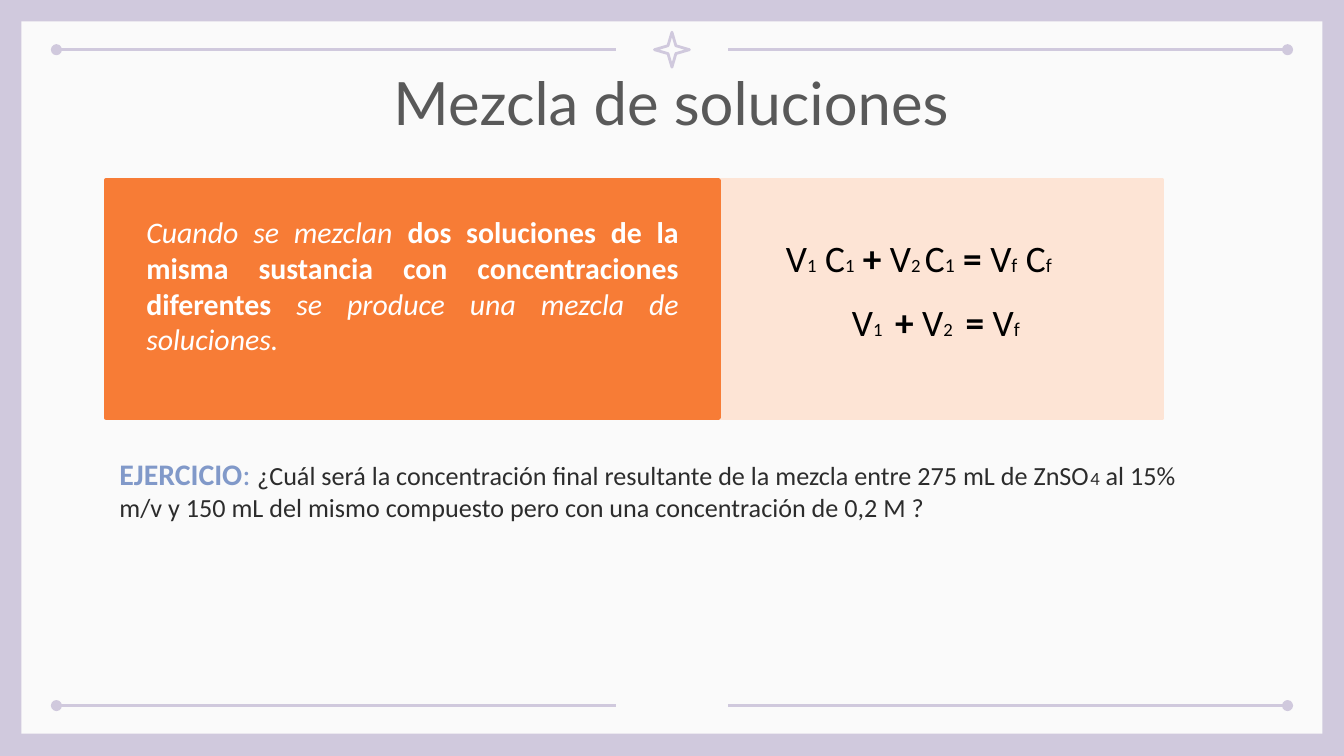
"""Build the slide on mixing solutions."""
from dataclasses import dataclass

from lxml import etree
from pptx import Presentation
from pptx.dml.color import RGBColor
from pptx.enum.shapes import MSO_CONNECTOR, MSO_SHAPE
from pptx.enum.text import MSO_ANCHOR, PP_ALIGN
from pptx.oxml.ns import qn
from pptx.util import Inches, Pt

LILAC = RGBColor(0xD0, 0xC9, 0xDD)
PAPER = RGBColor(0xFA, 0xFA, 0xFA)
GREY = RGBColor(0x59, 0x59, 0x59)
PEACH = RGBColor(0xFD, 0xE4, 0xD5)
ORANGE = RGBColor(0xF7, 0x7C, 0x36)
BLUE = RGBColor(0x81, 0x99, 0xC9)
INK = RGBColor(0x2C, 0x2C, 0x2C)
BLACK = RGBColor(0, 0, 0)
WHITE = RGBColor(0xFF, 0xFF, 0xFF)

RECTANGLE, STAR = MSO_SHAPE.RECTANGLE, MSO_SHAPE.STAR_4_POINT
STRAIGHT = MSO_CONNECTOR.STRAIGHT
TOP = MSO_ANCHOR.TOP
LEFT, CENTER, JUSTIFY = PP_ALIGN.LEFT, PP_ALIGN.CENTER, PP_ALIGN.JUSTIFY


@dataclass(frozen=True)
class Area:
    left: float
    top: float
    width: float
    height: float

    def lengths(self) -> tuple:
        return tuple(Inches(v) for v in (self.left, self.top, self.width, self.height))


@dataclass(frozen=True)
class Span:
    text: str
    size: float
    color: RGBColor = BLACK
    bold: bool = False
    italic: bool = False
    font: str = "Calibri"


@dataclass(frozen=True)
class TextBlock:
    area: Area
    spans: tuple
    align: PP_ALIGN = LEFT
    inset: float = 0.05
    indent: float = 0


@dataclass(frozen=True)
class Panel:
    area: Area
    fill: RGBColor | None
    line: RGBColor | None
    weight: float = 2
    kind: MSO_SHAPE = RECTANGLE


def add_panel(page, panel: Panel):
    """Draw a flat preset shape."""
    shape = page.shapes.add_shape(panel.kind, *panel.area.lengths())
    shape.shadow.inherit = False
    if panel.fill is None:
        shape.fill.background()
    else:
        shape.fill.solid()
        shape.fill.fore_color.rgb = panel.fill
    if panel.line is None:
        shape.line.fill.background()
    else:
        shape.line.color.rgb = panel.line
        shape.line.width = Pt(panel.weight)
    return shape


def add_rule(page, start: float, end: float, height: float, dotted_end: str) -> None:
    """Draw a rule with a dot at its outer end."""
    rule = page.shapes.add_connector(
        STRAIGHT, Inches(start), Inches(height), Inches(end), Inches(height))
    rule.line.color.rgb = LILAC
    rule.line.width = Pt(1.5)
    etree.SubElement(rule.line._get_or_add_ln(), qn(dotted_end), type="oval")
    etree.SubElement(rule._element.spPr, qn("a:effectLst"))


def write_text(box, block: TextBlock) -> None:
    """Place a text box and fill it with formatted spans."""
    box.left, box.top, box.width, box.height = block.area.lengths()
    frame = box.text_frame
    layout = {
        "word_wrap": True, "vertical_anchor": TOP,
        "margin_left": Inches(0.1), "margin_right": Inches(0.1),
        "margin_top": Inches(block.inset), "margin_bottom": Inches(block.inset),
    }
    for name, value in layout.items():
        setattr(frame, name, value)
    para = frame.paragraphs[0]
    para.alignment = block.align
    if block.indent:
        para._p.get_or_add_pPr().set("marL", str(Inches(block.indent)))
    for span in block.spans:
        run = para.add_run()
        run.text = span.text
        style = {"name": span.font, "size": Pt(span.size),
                 "bold": span.bold, "italic": span.italic}
        for name, value in style.items():
            setattr(run.font, name, value)
        run.font.color.rgb = span.color


def term(symbol: str, index: str, index_size: float = 10) -> tuple:
    """Return a symbol with its small index."""
    return Span(symbol, 20), Span(index, index_size)


def sign(text: str) -> Span:
    """Return a bold operator."""
    return Span(text, 20, bold=True)


TITLE = TextBlock(Area(0.79, 0.39, 8.41, 0.63),
                  (Span("Mezcla de soluciones", 32, GREY, font="Lato"),), CENTER, 0.1)
EQUATIONS_PANEL = Panel(Area(4.87, 1.34, 3.78, 1.77), PEACH, PEACH)
DEFINITION_PANEL = Panel(Area(0.79, 1.34, 4.56, 1.77), ORANGE, ORANGE)
EQUATIONS_AND_EXERCISE = (
    TextBlock(Area(5.75, 1.7, 4.4, 0.95), (
        *term("V", "1"), *term(" C", "1"), sign(" +"), *term(" V", "2 "),
        *term("C", "1", 10.5), sign(" = "), *term("V", "f", 10.5),
        *term(" C", "f", 10.5))),
    TextBlock(Area(6.24, 2.18, 4.4, 0.44), (
        *term("V", "1 "), sign(" +"), *term(" V", "2 "),
        sign(" = "), *term("V", "f", 10.5))),
    TextBlock(Area(0.79, 3.34, 8.28, 0.61), (
        Span("EJERCICIO", 16, BLUE, bold=True),
        Span(": ", 16, BLUE),
        Span("¿Cuál será la concentración final resultante de la mezcla "
             "entre 275 mL de ZnSO", 14, INK),
        Span("4", 10, INK),
        Span(" al 15% m/v y 150 mL del mismo compuesto pero con una "
             "concentración de 0,2 M ?", 14, INK))),
)
DEFINITION = TextBlock(Area(0.87, 1.49, 4.28, 1.37), (
    Span("Cuando se mezclan ", 16, WHITE, italic=True),
    Span("dos soluciones de la misma sustancia con concentraciones "
         "diferentes ", 16, WHITE, bold=True),
    Span("se produce una mezcla de soluciones.", 16, WHITE, italic=True)),
    JUSTIFY, 0.1, 0.12)


def add_text(page, block: TextBlock) -> None:
    """Add a text box for a block."""
    write_text(page.shapes.add_textbox(*block.area.lengths()), block)


def main() -> None:
    """Assemble and save the deck."""
    deck = Presentation()
    deck.slide_width = Inches(10)
    deck.slide_height = deck.slide_width * 9 // 16
    page = deck.slides.add_slide(deck.slide_layouts[5])
    page.background.fill.solid()
    page.background.fill.fore_color.rgb = LILAC
    add_panel(page, Panel(Area(0.16, 0.16, 9.68, 5.3), PAPER, None))
    for height in (0.37, 5.25):
        add_rule(page, 0.42, 4.58, height, "a:headEnd")
        add_rule(page, 5.42, 9.58, height, "a:tailEnd")
    star = add_panel(page, Panel(Area(4.87, 0.24, 0.26, 0.26), None, LILAC, 1.5, STAR))
    star.adjustments[0] = 0.16
    title = page.shapes.title
    page.shapes._spTree.append(title._element)
    write_text(title, TITLE)
    add_panel(page, EQUATIONS_PANEL)
    for block in EQUATIONS_AND_EXERCISE:
        add_text(page, block)
    add_panel(page, DEFINITION_PANEL)
    add_text(page, DEFINITION)
    deck.save("out.pptx")


if __name__ == "__main__":
    main()
